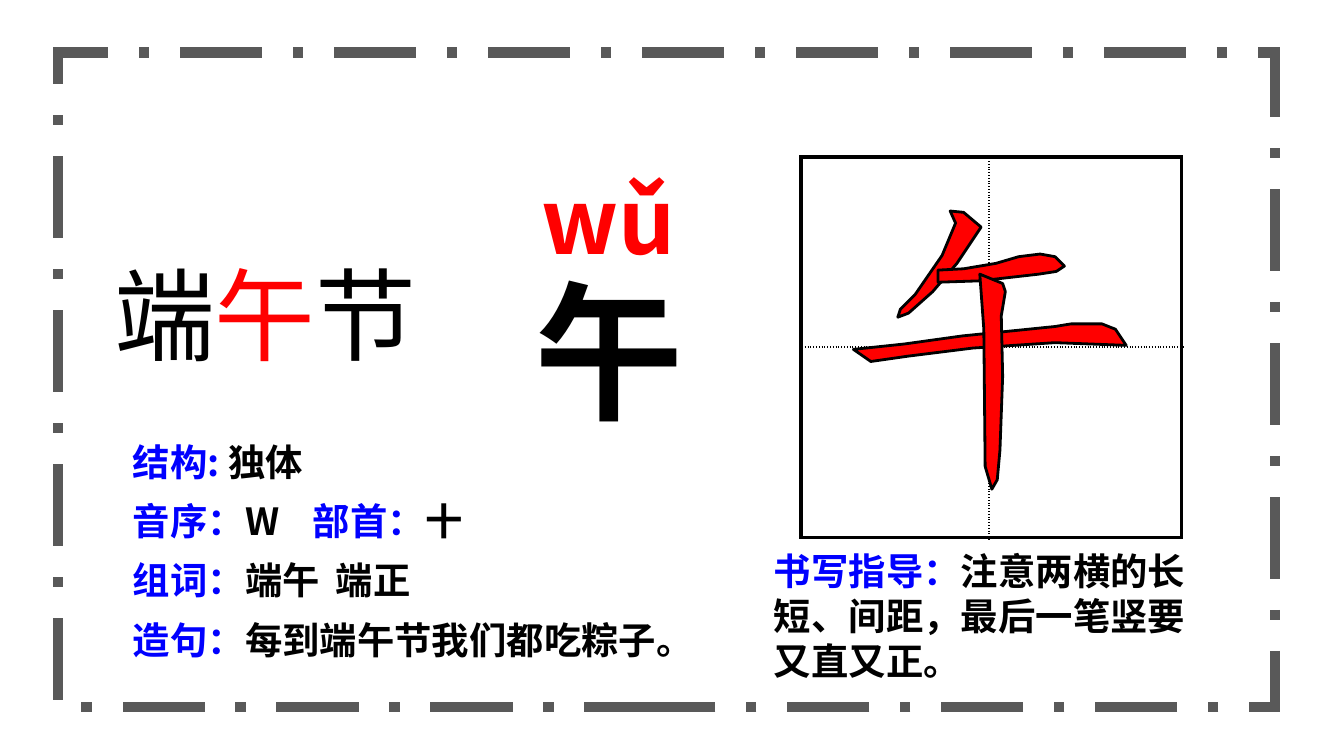
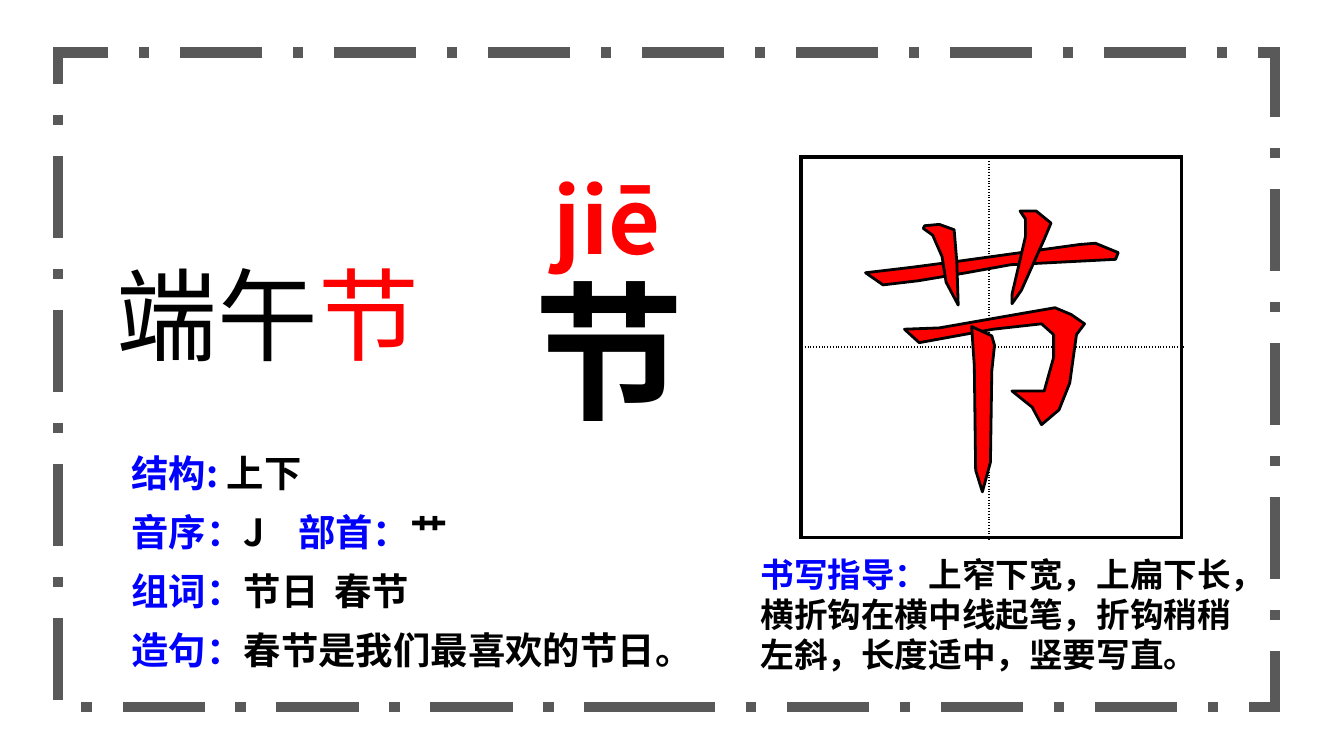
from dataclasses import dataclass

from lxml.etree import SubElement
from pptx import Presentation
from pptx.dml.color import RGBColor
from pptx.enum.dml import MSO_LINE
from pptx.enum.shapes import MSO_SHAPE
from pptx.enum.text import MSO_AUTO_SIZE as AutoSize
from pptx.oxml.ns import qn
from pptx.util import Emu, Pt

PX = 9144  # 100 px to the inch


@dataclass(frozen=True)
class Theme:
    ink: str = "000000"
    label: str = "0000FF"
    accent: str = "FF0000"
    frame: str = "595959"
    font: str = "Noto Sans CJK SC"
    pinyin_font: str = "Noto Sans CJK JP"
    word_size: int = 54
    character_size: int = 80
    pinyin_size: int = 48
    info_size: int = 20
    frame_line: float = 5.5
    grid_line: float = 2.25
    guide_line: float = 1.5
    stroke_line: float = 1.5


THEME = Theme()
INK, LABEL, ACCENT = THEME.ink, THEME.label, THEME.accent

# Shared places
SLIDE_SIZE = (1000, 562.5)
FRAME = (43, 39, 906, 487)
GRID_AT = (596, 117)
GRID_COLUMNS = (140, 143)
GRID_ROWS = (141, 142)
CHARACTER_BOX = (388, 188, 133, 145)
PINYIN_SIZE = (202, 90)
WORD_TOP, WORD_HEIGHT = 183, 101
ROW_STEP = 44
PINYIN_INDENT = 45
MARGIN = 10

# Brush strokes as outlines, in slide px
WU_STROKES = [
    [(681, 219), (701, 190), (711, 166), (707, 157), (717, 158), (730, 169),
     (712, 196), (694, 217), (676, 233), (668, 236), (670, 230)],
    [(786, 202), (773, 204), (729, 209), (698, 210), (698, 201), (717, 200),
     (741, 196), (758, 191), (774, 189), (785, 191), (792, 198)],
    [(838, 257), (785, 255), (724, 259), (676, 265), (648, 269), (635, 260),
     (673, 256), (716, 250), (785, 243), (797, 241), (820, 241), (830, 245)],
    [(738, 364), (733, 347), (732, 245), (729, 204), (746, 211), (748, 217),
     (745, 235), (746, 280), (744, 335), (742, 357)],
]
JIE_STROKES = [
    [(719, 203), (683, 209), (657, 212), (644, 203), (678, 199), (716, 194),
     (803, 182), (815, 181), (832, 188), (830, 193), (752, 197)],
    [(688, 168), (699, 167), (710, 171), (712, 195), (713, 227), (704, 210),
     (701, 191), (694, 175), (687, 170)],
    [(777, 178), (760, 216), (753, 226), (753, 219), (763, 176), (763, 163),
     (759, 157), (771, 157), (782, 166)],
    [(797, 234), (807, 241), (801, 249), (796, 285), (788, 305), (775, 316),
     (768, 303), (753, 291), (777, 291), (784, 266), (784, 249), (775, 241),
     (739, 245), (684, 255), (673, 245), (699, 244), (762, 233), (785, 229)],
    [(726, 350), (725, 272), (723, 243), (738, 250), (740, 257), (738, 276),
     (737, 344), (731, 366)],
]

# Slide content; an info row is (width, spans, tab stop or None)
CARDS = [
    {
        "character": "午",
        "pinyin": ("wǔ", (348, 118)),
        "word": ([("端", INK), ("午", ACCENT), ("节", INK)], 75, 285),
        "info_at": (89, 322),
        "info": [
            (227, [("结构: ", LABEL), ("独体", INK)], None),
            (272, [("音序：", LABEL), ("W\t", INK), ("部首：", LABEL), ("十", INK)], 134),
            (331, [("组词：", LABEL), ("端午\t端正", INK)], 151),
            (437, [("造句：", LABEL), ("每到端午节我们都吃粽子。", INK)], None),
        ],
        "guide": ("注意两横的长短、间距，最后一笔竖要又直又正。", 20, (566, 403, 351, 111)),
        "strokes": WU_STROKES,
    },
    {
        "character": "节",
        "pinyin": ("jiē", (357, 118)),
        "word": ([("端午", INK), ("节", ACCENT)], 77, 254),
        "info_at": (88, 330),
        "info": [
            (227, [("结构: ", LABEL), ("上下", INK)], None),
            (258, [("音序：", LABEL), ("J\t", INK), ("部首：", LABEL), ("艹", INK)], 124),
            (331, [("组词：", LABEL), ("节日\t春节", INK)], 151),
            (431, [("造句：", LABEL), ("春节是我们最喜欢的节日。", INK)], None),
        ],
        "guide": ("上窄下宽，上扁下长，横折钩在横中线起笔，折钩稍稍左斜，长度适中，竖要写直。",
                  18, (556, 407, 378, 101)),
        "strokes": JIE_STROKES,
    },
]


def px(length):
    return Emu(int(length * PX))


def place(box):
    return [px(length) for length in box]


def rgb(color):
    return RGBColor.from_string(color)


def set_line(shape, color, width, join, dash=MSO_LINE.SOLID):
    shape.shadow.inherit = False
    shape.line.color.rgb = rgb(color)
    shape.line.width = Pt(width)
    shape.line.dash_style = dash
    SubElement(shape._element.spPr.find(qn("a:ln")), qn(f"a:{join}"))


def add_text(page, box, spans, size, font=THEME.font, bold=True, wrap=True, indent=0, tab=None):
    frame = page.shapes.add_textbox(*place(box)).text_frame
    frame.word_wrap = wrap
    frame.auto_size = AutoSize.SHAPE_TO_FIT_TEXT
    frame.margin_left = px(MARGIN + indent)
    para = frame.paragraphs[0]
    properties = para._p.get_or_add_pPr()
    if tab:
        stops = SubElement(properties, qn("a:tabLst"))
        SubElement(stops, qn("a:tab"), pos=str(px(tab)), algn="l")
    para.font.name, para.font.size, para.font.bold = font, Pt(size), bold
    SubElement(properties.find(qn("a:defRPr")), qn("a:ea"), typeface=font)
    for text, color in spans:
        span = para.add_run()
        span.text = text
        span.font.color.rgb = rgb(color)


def add_frame(page):
    frame = page.shapes.add_shape(MSO_SHAPE.RECTANGLE, *place(FRAME))
    frame.fill.background()
    set_line(frame, THEME.frame, THEME.frame_line, "miter", MSO_LINE.LONG_DASH_DOT)


def add_border(cell, side, width, dash):
    line = SubElement(cell._tc.get_or_add_tcPr(), qn(f"a:ln{side}"), w=str(Pt(width)))
    fill = SubElement(line, qn("a:solidFill"))
    SubElement(fill, qn("a:srgbClr"), val=INK)
    SubElement(line, qn("a:prstDash"), val=dash)


def add_writing_grid(page):
    size = (sum(GRID_COLUMNS), sum(GRID_ROWS))
    table = page.shapes.add_table(2, 2, *place(GRID_AT + size)).table
    table.first_row = table.horz_banding = False
    for index in range(2):
        table.columns[index].width = px(GRID_COLUMNS[index])
        table.rows[index].height = px(GRID_ROWS[index])
    for row in range(2):
        for column in range(2):
            cell = table.cell(row, column)
            outer = {"L": column == 0, "R": column == 1, "T": row == 0, "B": row == 1}
            for side, is_outer in outer.items():
                if is_outer:
                    add_border(cell, side, THEME.grid_line, "solid")
                else:
                    add_border(cell, side, THEME.guide_line, "sysDot")
            cell.fill.background()


def add_stroke(page, points):
    builder = page.shapes.build_freeform(*points[0], scale=PX)
    builder.add_line_segments(points[1:], close=True)
    stroke = builder.convert_to_shape()
    stroke.fill.solid()
    stroke.fill.fore_color.rgb = rgb(ACCENT)
    set_line(stroke, INK, THEME.stroke_line, "round")


def add_card(deck, card):
    page = deck.slides.add_slide(deck.slide_layouts[6])
    add_frame(page)
    add_writing_grid(page)

    # Writing advice under the grid
    advice, size, box = card["guide"]
    add_text(page, box, [("书写指导：", LABEL), (advice, INK)], size)

    # Character, pinyin and word
    add_text(page, CHARACTER_BOX, [(card["character"], INK)], THEME.character_size, wrap=False)
    pinyin, corner = card["pinyin"]
    add_text(page, corner + PINYIN_SIZE, [(pinyin, ACCENT)], THEME.pinyin_size,
             font=THEME.pinyin_font, indent=PINYIN_INDENT)
    spans, left, width = card["word"]
    add_text(page, (left, WORD_TOP, width, WORD_HEIGHT), spans, THEME.word_size, bold=False)

    # Facts about the character
    left, top = card["info_at"]
    for index, (width, spans, tab) in enumerate(card["info"]):
        box = (left, top + index * ROW_STEP, width, ROW_STEP)
        add_text(page, box, spans, THEME.info_size, tab=tab)

    for points in card["strokes"]:
        add_stroke(page, points)


def main():
    deck = Presentation()
    deck.slide_width, deck.slide_height = place(SLIDE_SIZE)
    for card in CARDS:
        add_card(deck, card)
    deck.save("out.pptx")


if __name__ == "__main__":
    main()
